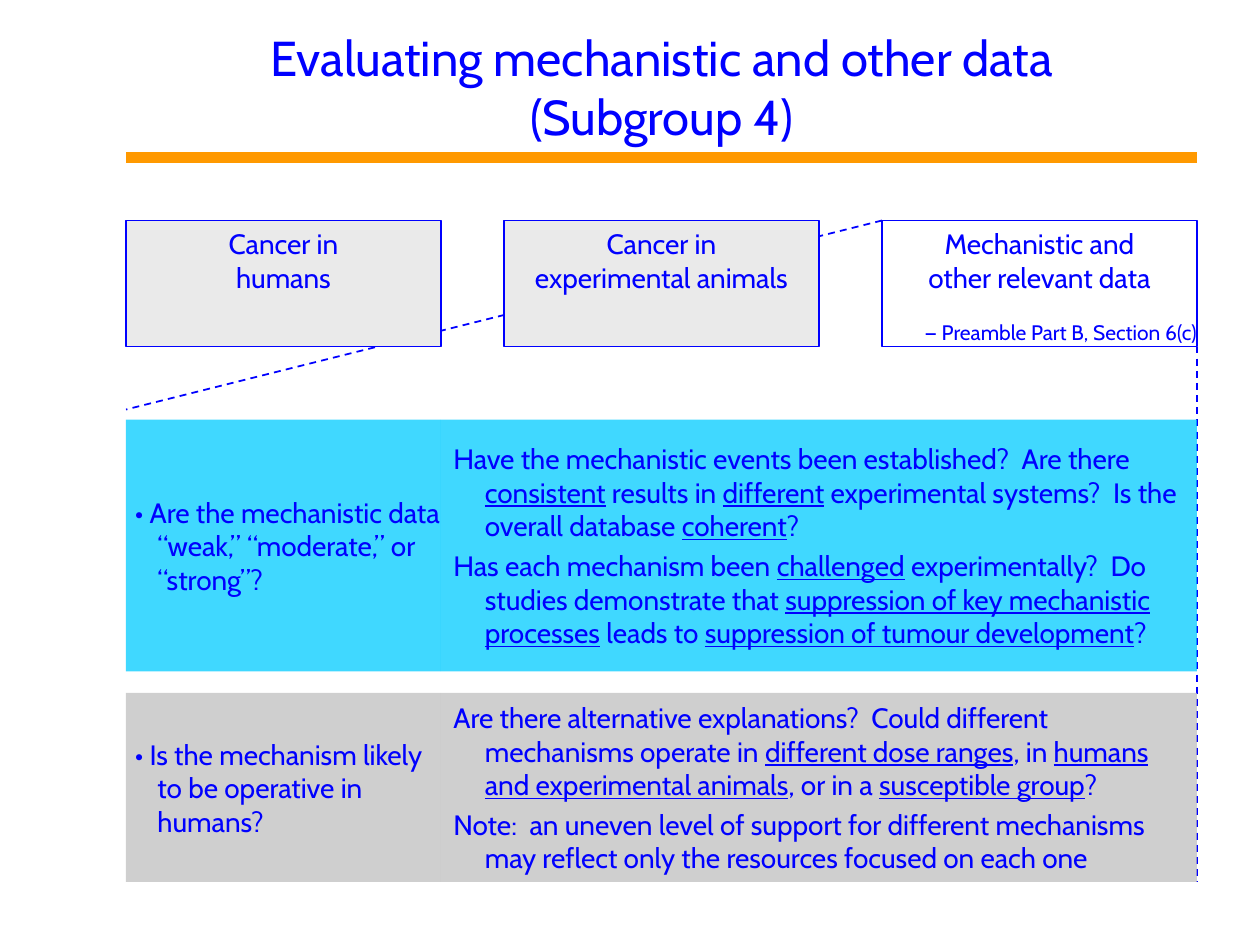
from dataclasses import dataclass

from lxml import etree
from pptx import Presentation
from pptx.dml.color import RGBColor
from pptx.enum.dml import MSO_LINE
from pptx.enum.shapes import MSO_CONNECTOR, MSO_SHAPE
from pptx.enum.text import MSO_ANCHOR, MSO_AUTO_SIZE, PP_ALIGN
from pptx.oxml.ns import qn
from pptx.util import Inches, Pt

RECTANGLE = MSO_SHAPE.RECTANGLE
STRAIGHT = MSO_CONNECTOR.STRAIGHT
DASH = MSO_LINE.DASH
TOP, MIDDLE, BOTTOM = MSO_ANCHOR.TOP, MSO_ANCHOR.MIDDLE, MSO_ANCHOR.BOTTOM
LEFT, CENTER, RIGHT = PP_ALIGN.LEFT, PP_ALIGN.CENTER, PP_ALIGN.RIGHT

FONT = "Cabin"
COLORS = {"blue": "0000FF", "orange": "FF9900", "cyan": "00CCFF",
          "gray": "C0C0C0", "pale": "EAEAEA", "white": "FFFFFF"}

# Grid in inches: three evenly spaced boxes above two rows of panels
MARGIN_LEFT, MARGIN_RIGHT = 1, 9.5
COLUMN_WIDTH, COLUMN_STEP = 2.5, 3
BOX_TOP, BOX_HEIGHT = 1.75, 1
BOX_BOTTOM = BOX_TOP + BOX_HEIGHT
ANSWER_LEFT = MARGIN_LEFT + COLUMN_WIDTH
PANEL_BOTTOM = 7


@dataclass
class Line:
    text: str  # underlined parts stand between underscores
    size: float = 16
    align: PP_ALIGN = CENTER
    margin: float = 0.38
    hanging: float = 0.38
    before: float = 0
    after: float = 0


@dataclass
class Box:
    color: str
    lines: list[Line]


@dataclass
class PanelRow:
    top: float
    height: float
    color: str
    question: str
    details: list[str]


BOXES = [
    Box("pale", [Line("Cancer in"), Line("humans")]),
    Box("pale", [Line("Cancer in"), Line("experimental animals")]),
    Box("white", [Line("Mechanistic and"), Line("other relevant data"),
                  Line("— Preamble Part B, Section 6(c)", 12, RIGHT, before=14.5)]),
]

PANEL_ROWS = [
    PanelRow(3.33, 2, "cyan",
             "• Are the mechanistic data “weak,” “moderate,” or “strong”?",
             ["Have the mechanistic events been established?  Are there _consistent_ "
              "results in _different_ experimental systems?  Is the overall database "
              "_coherent_?",
              "Has each mechanism been _challenged_ experimentally?  Do studies "
              "demonstrate that _suppression of key mechanistic processes_ leads to "
              "_suppression of tumour development_?"]),
    PanelRow(5.5, 1.5, "gray",
             "• Is the mechanism likely to be operative in humans?",
             ["Are there alternative explanations?  Could different mechanisms operate "
              "in _different dose ranges_, in _humans and experimental animals_, or in "
              "a _susceptible group_?",
              "Note:  an uneven level of support for different mechanisms may reflect "
              "only the resources focused on each one"]),
]


def rgb(name: str) -> RGBColor:
    return RGBColor.from_string(COLORS[name])


def set_font(paragraph, size: float) -> None:
    paragraph.font.name = FONT
    paragraph.font.size = Pt(size)
    paragraph.font.color.rgb = rgb("blue")


def set_frame(frame, anchor, left: float = 0, top: float = 0, bottom: float = 0) -> None:
    frame.word_wrap = True
    frame.auto_size = MSO_AUTO_SIZE.NONE
    frame.vertical_anchor = anchor
    frame.margin_left, frame.margin_right = Inches(left), 0
    frame.margin_top, frame.margin_bottom = Inches(top), Inches(bottom)


def write_lines(frame, lines: list[Line]) -> None:
    for index, line in enumerate(lines):
        paragraph = frame.add_paragraph() if index else frame.paragraphs[0]
        paragraph.alignment = line.align
        paragraph.space_before, paragraph.space_after = Pt(line.before), Pt(line.after)
        set_font(paragraph, line.size)
        properties = paragraph._p.get_or_add_pPr()
        properties.set("marL", str(Inches(line.margin)))
        properties.set("indent", str(-Inches(line.hanging)))
        for position, part in enumerate(line.text.split("_")):
            run = paragraph.add_run()
            run.text = part
            if position % 2:
                run.font.underline = True


def add_rectangle(slide, left: float, top: float, width: float, height: float, color: str):
    shape = slide.shapes.add_shape(RECTANGLE, Inches(left), Inches(top),
                                   Inches(width), Inches(height))
    shape.shadow.inherit = False
    shape.fill.solid()
    shape.fill.fore_color.rgb = rgb(color)
    return shape


def add_box(slide, column: int, box: Box) -> None:
    shape = add_rectangle(slide, MARGIN_LEFT + column * COLUMN_STEP, BOX_TOP,
                          COLUMN_WIDTH, BOX_HEIGHT, box.color)
    shape.line.color.rgb = rgb("blue")
    shape.line.width = Pt(1)
    set_frame(shape.text_frame, TOP, top=0.05)
    write_lines(shape.text_frame, box.lines)


def add_panel(slide, row: PanelRow, left: float, right: float, inset: float,
              texts: list[str], hanging: float) -> None:
    shape = add_rectangle(slide, left, row.top, right - left, row.height, row.color)
    shape.line.fill.background()
    color = shape._element.spPr.find(qn("a:solidFill")).find(qn("a:srgbClr"))
    etree.SubElement(color, qn("a:alpha")).set("val", "75000")
    set_frame(shape.text_frame, MIDDLE, left=inset)
    write_lines(shape.text_frame, [Line(text, 16, LEFT, 0.25, hanging, 1.7, 1.7)
                                   for text in texts])


def add_line(slide, start: tuple[float, float], end: tuple[float, float],
             color: str, width: float, dash=None) -> None:
    connector = slide.shapes.add_connector(STRAIGHT, *map(Inches, start + end))
    connector.line.color.rgb = rgb(color)
    connector.line.width = Pt(width)
    if dash:
        connector.line.dash_style = dash
    etree.SubElement(connector._element.spPr, qn("a:effectLst"))


def add_title(slide, text: str) -> None:
    title = slide.shapes.title
    title.left, title.top = Inches(1.5), Inches(0.25)
    title.width, title.height = Inches(7.5), Inches(1)
    set_frame(title.text_frame, BOTTOM, bottom=0.1)
    paragraph = title.text_frame.paragraphs[0]
    paragraph.text = text
    paragraph.alignment = CENTER
    set_font(paragraph, 28)


def main() -> None:
    presentation = Presentation()
    presentation.slide_width, presentation.slide_height = Inches(10), Inches(7.5)
    slide = presentation.slides.add_slide(presentation.slide_layouts[5])

    # Title with its rule
    add_line(slide, (MARGIN_LEFT, 1.25), (MARGIN_RIGHT, 1.25), "orange", 6)
    add_title(slide, "Evaluating mechanistic and other data\v(Subgroup 4)")

    # Dashed lines that open the third box out into the panels
    add_line(slide, (MARGIN_RIGHT, BOX_BOTTOM), (MARGIN_RIGHT, PANEL_BOTTOM),
             "blue", 1, DASH)
    add_line(slide, (MARGIN_LEFT + 2 * COLUMN_STEP, BOX_TOP), (MARGIN_LEFT, 3.25),
             "blue", 1, DASH)

    # Question and detail panels
    for row in PANEL_ROWS:
        add_panel(slide, row, MARGIN_LEFT, ANSWER_LEFT, 0, [row.question], 0.18)
        add_panel(slide, row, ANSWER_LEFT, MARGIN_RIGHT, 0.1, row.details, 0.25)

    # Kinds of evidence
    for column, box in enumerate(BOXES):
        add_box(slide, column, box)

    presentation.save("out.pptx")


if __name__ == "__main__":
    main()
